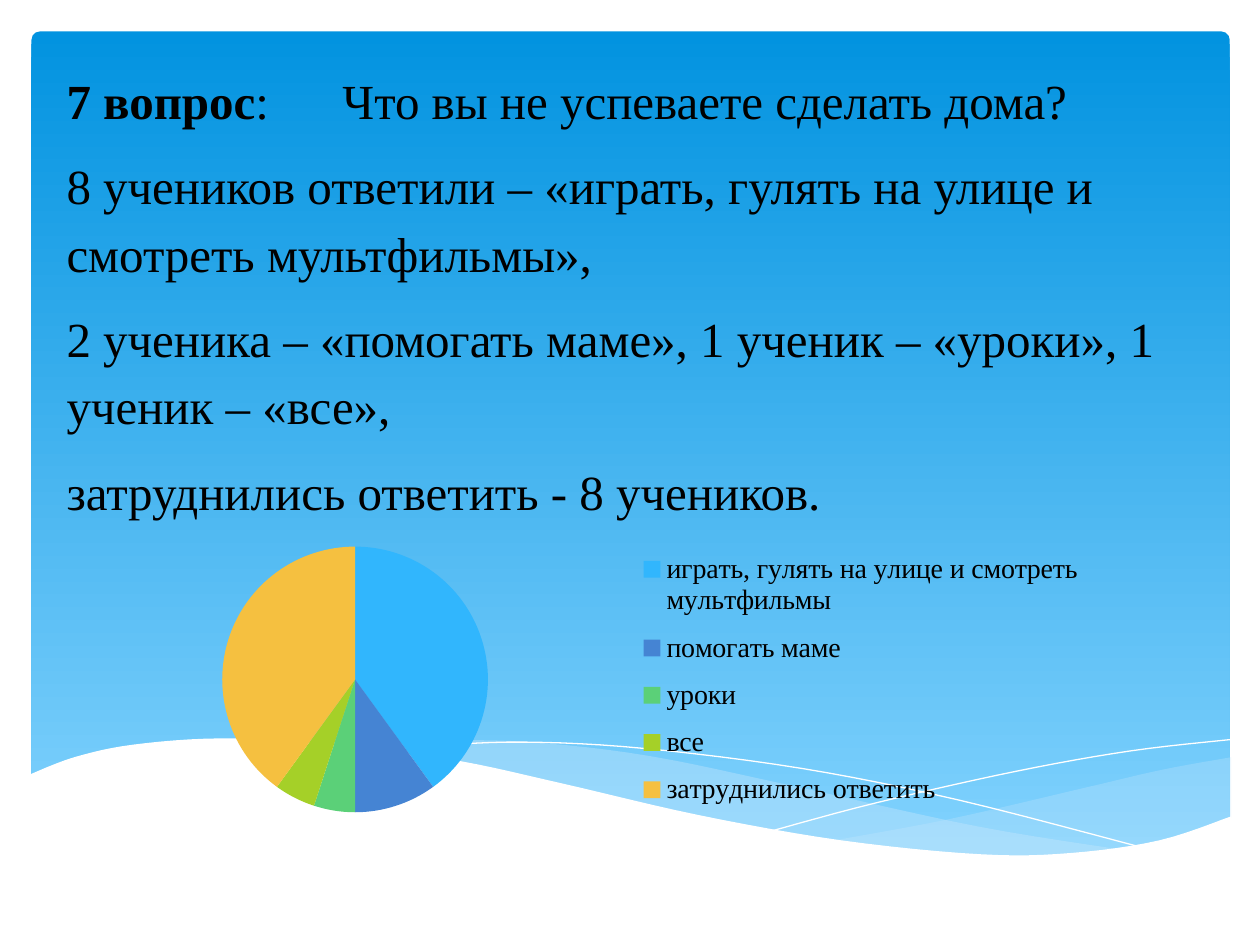
import pptx
import pptx.chart.data
import pptx.dml.color
import pptx.enum.chart
import pptx.enum.shapes
import pptx.enum.text
import pptx.oxml
import pptx.oxml.ns
import pptx.util
from pptx.util import Inches

SERIF = "Times New Roman"
QN = pptx.oxml.ns.qn

# Wave outlines, in inches from the corner of the wave box
RIGHT_TOP = [(9.54, 0.15), (8.99, 0.25), (8.39, 0.39), (7.31, 0.64), (6.39, 0.81)]
RIGHT_LOW = [(6.39, 0.81), (6.96, 0.88), (7.92, 0.94), (8.59, 0.89),
             (9.14, 0.77), (9.54, 0.63)]
MID_TOP = [(2.64, 0.07), (3.22, 0.02), (3.97, 0.03), (4.92, 0.14),
           (6.07, 0.38), (7.53, 0.7), (8.71, 0.89)]
MID_LOW = [(8.71, 0.89), (7.96, 0.94), (7, 0.9), (5.79, 0.71),
           (4.27, 0.38), (3.4, 0.18), (2.64, 0.07)]
FALL = [(2.87, 0.11), (3.21, 0.06), (3.94, 0.03), (4.88, 0.08),
        (6.14, 0.24), (7.38, 0.49), (8.85, 0.87)]
RISE = [(5.91, 0.73), (6.73, 0.51), (7.84, 0.26), (8.74, 0.1), (9.53, 0.01)]
FRONT = [(0, 0.29), (0.36, 0.15), (0.83, 0.05), (1.54, 0), (2.48, 0.04),
         (3.42, 0.18), (4.24, 0.36), (5.32, 0.61), (6.45, 0.81), (7.55, 0.92),
         (8.27, 0.91), (8.97, 0.81), (9.54, 0.62)]
BASE = [(9.54, 1.45), (0, 1.45)]

TEXT = [
    [("7 вопрос", True), (":\tЧто вы не успеваете сделать дома?", False)],
    [("8 учеников ответили – «играть, гулять на улице и смотреть мультфильмы»,", False)],
    [("2 ученика – «помогать маме», 1 ученик – «уроки», 1 ученик – «все»,", False)],
    [("затруднились ответить - 8 учеников.", False)],
]
SLICES = [
    ("играть, гулять на улице и смотреть мультфильмы", 40, "31B6FD"),
    ("помогать маме", 10, "4584D3"),
    ("уроки", 5, "5BD078"),
    ("все", 5, "A5D028"),
    ("затруднились ответить", 40, "F5C040"),
]


def color(code):
    return pptx.dml.color.RGBColor.from_string(code)


def smooth(knots, steps=6):
    """Points of a Catmull-Rom curve through the knots."""
    ends = [knots[0], *knots, knots[-1]]
    points = [knots[0]]
    for a, b, c, d in zip(ends, ends[1:], ends[2:], ends[3:]):
        for step in range(1, steps + 1):
            t = step / steps
            points.append(tuple(
                (2 * q + (r - p) * t + (2 * p - 5 * q + 4 * r - s) * t ** 2
                 + (3 * q - p - 3 * r + s) * t ** 3) / 2
                for p, q, r, s in zip(a, b, c, d)))
    return points


def outline(slide, left, top, points, close):
    spots = [(left + Inches(x), top + Inches(y)) for x, y in points]
    pen = slide.shapes.build_freeform(*spots[0])
    pen.add_line_segments(spots[1:], close=close)
    shape = pen.convert_to_shape()
    shape.shadow.inherit = False
    return shape


def add_wave(slide, left, top, points, code, alpha=100):
    shape = outline(slide, left, top, points, True)
    shape.fill.solid()
    shape.fill.fore_color.rgb = color(code)
    shape.line.fill.background()
    if alpha < 100:
        tint = shape.fill._xPr.find(".//" + QN("a:srgbClr"))
        tint.append(pptx.oxml.parse_xml(
            f'<a:alpha {pptx.oxml.ns.nsdecls("a")} val="{alpha * 1000}"/>'))


def add_panel(slide, left, top, width, height):
    panel = slide.shapes.add_shape(
        pptx.enum.shapes.MSO_SHAPE.ROUNDED_RECTANGLE, left, top, width, height)
    panel.adjustments[0] = 0.01
    panel.shadow.inherit = False
    panel.line.fill.background()
    panel.fill.gradient()
    panel.fill.gradient_angle = 270
    for stop, place, code in zip(panel.fill.gradient_stops, (0, 1), ("0293E0", "83D3FE")):
        stop.position = place
        stop.color.rgb = color(code)


def add_waves(slide, left, top):
    add_wave(slide, left, top, smooth(RIGHT_TOP) + smooth(RIGHT_LOW), "C6E7FC", 29)
    add_wave(slide, left, top, smooth(MID_TOP) + smooth(MID_LOW), "C6E7FC", 40)
    for knots in (FALL, RISE):
        curve = outline(slide, left, top, smooth(knots), False)
        curve.fill.background()
        curve.line.color.rgb = color("FFFFFF")
        curve.line.width = pptx.util.Pt(0)
    add_wave(slide, left, top, smooth(FRONT) + BASE, "FFFFFF")


def add_text(slide, left, top, width, height):
    frame = slide.shapes.add_textbox(left, top, width, height).text_frame
    frame.word_wrap = True
    frame.auto_size = pptx.enum.text.MSO_AUTO_SIZE.SHAPE_TO_FIT_TEXT
    for index, parts in enumerate(TEXT):
        para = frame.add_paragraph() if index else frame.paragraphs[0]
        para.line_spacing = 1.15
        para.space_after = pptx.util.Pt(10)
        for words, bold in parts:
            run = para.add_run()
            run.text = words
            run.font.name = SERIF
            run.font.size = pptx.util.Pt(28)
            run.font.bold = bold
            run.font.color.rgb = color("000000")
    # Tab stop between the question's number and its wording
    frame.paragraphs[0]._p.get_or_add_pPr().append(pptx.oxml.parse_xml(
        f'<a:tabLst {pptx.oxml.ns.nsdecls("a")}>'
        f'<a:tab pos="{Inches(2.19)}" algn="l"/></a:tabLst>'))


def layout(owner, x, y, w, h, target=""):
    """Fixed place of a chart part, in fractions of the chart."""
    for old in owner.findall(QN("c:layout")):
        owner.remove(old)
    sizes = "".join(f'<c:{tag} val="{size}"/>'
                    for tag, size in zip("xywh", (x, y, w, h)))
    return pptx.oxml.parse_xml(
        f'<c:layout {pptx.oxml.ns.nsdecls("c")}><c:manualLayout>{target}'
        '<c:xMode val="edge"/><c:yMode val="edge"/>'
        f'{sizes}</c:manualLayout></c:layout>')


def add_pie(slide, left, top, width, height):
    data = pptx.chart.data.CategoryChartData()
    data.categories = [name for name, _, _ in SLICES]
    data.add_series("Series 1", [value for _, value, _ in SLICES])
    chart = slide.shapes.add_chart(
        pptx.enum.chart.XL_CHART_TYPE.PIE, left, top, width, height, data).chart
    chart.has_title = False
    chart.font.name = "Cabin"
    chart.font.size = pptx.util.Pt(10)
    chart.font.color.rgb = color("000000")
    for index, (_, _, code) in enumerate(SLICES):
        fill = chart.plots[0].series[0].points[index].format.fill
        fill.solid()
        fill.fore_color.rgb = color(code)

    # Legend
    chart.has_legend = True
    legend = chart.legend
    legend.position = pptx.enum.chart.XL_LEGEND_POSITION.RIGHT
    legend.include_in_layout = False
    legend.font.name = SERIF
    legend.font.size = pptx.util.Pt(16)
    legend.font.color.rgb = color("000000")

    # Places of the pie and the legend
    area = chart._chartSpace.find(".//" + QN("c:plotArea"))
    area.insert(0, layout(area, 0.16, 0.05, 0.25, 0.89, '<c:layoutTarget val="inner"/>'))
    key = legend._element
    key.find(QN("c:overlay")).addprevious(layout(key, 0.54, 0.02, 0.44, 0.95))


def main():
    deck = pptx.Presentation()
    deck.slide_width, deck.slide_height = Inches(10), Inches(7.5)
    slide = deck.slides.add_slide(deck.slide_layouts[6])
    add_panel(slide, Inches(0.25), Inches(0.25), Inches(9.51), Inches(6.6))
    add_waves(slide, Inches(0.23), Inches(5.86))
    add_text(slide, Inches(0.43), Inches(0.44), Inches(9.06), Inches(3.77))
    add_pie(slide, Inches(0.41), Inches(4.22), Inches(8.45), Inches(2.37))
    deck.save("out.pptx")


if __name__ == "__main__":
    main()
